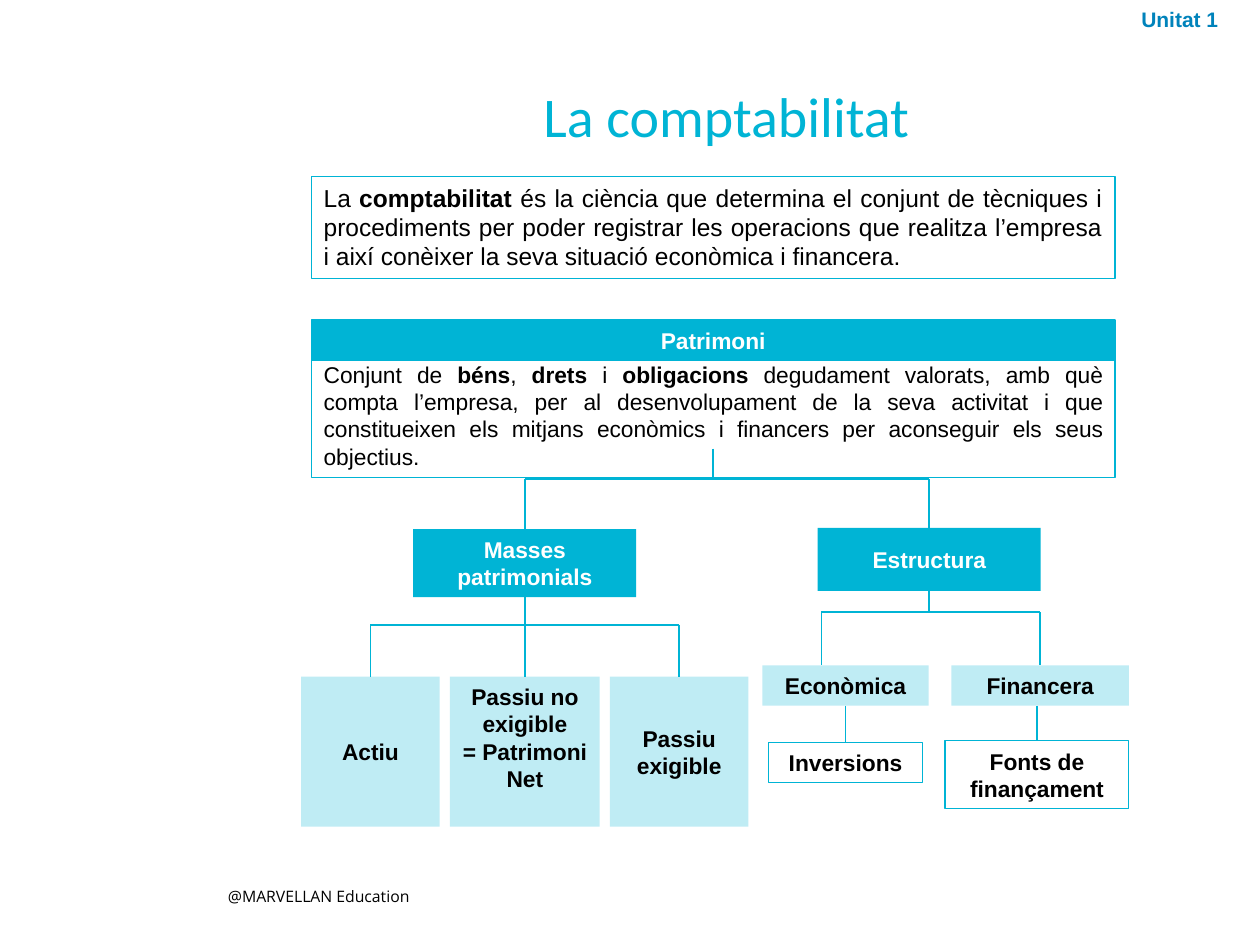
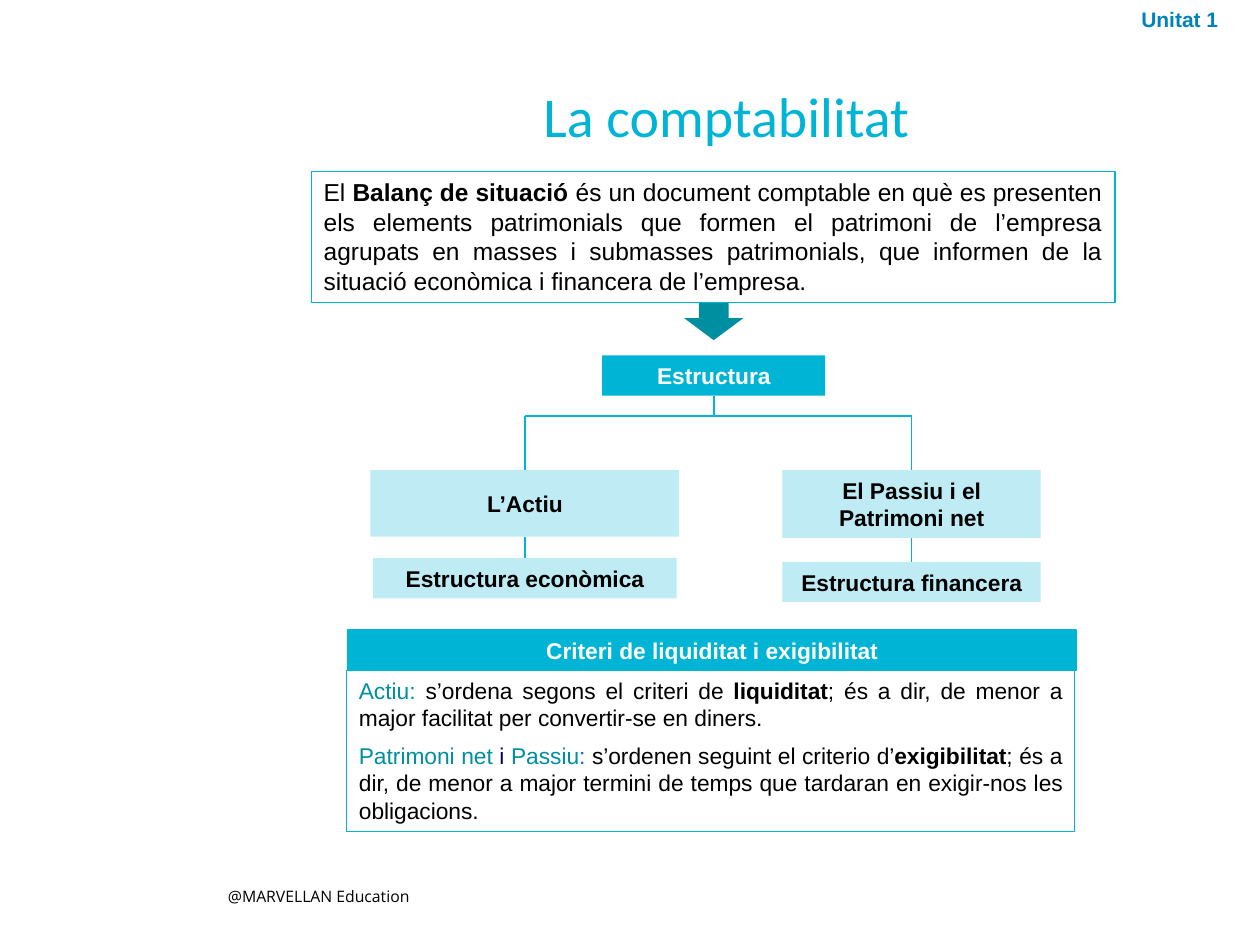
from lxml.etree import SubElement
from pptx import Presentation
from pptx.dml.color import RGBColor
from pptx.enum.shapes import MSO_CONNECTOR, MSO_SHAPE
from pptx.enum.text import MSO_ANCHOR, PP_ALIGN
from pptx.oxml.ns import qn
from pptx.util import Inches, Pt

CYAN = RGBColor(0x00, 0xB4, 0xD5)
TEAL = RGBColor(0x00, 0x8F, 0xA0)
BLUE = RGBColor(0x00, 0x83, 0xBB)
NAVY = RGBColor(0x00, 0x00, 0x64)
AZURE = RGBColor(0x00, 0x64, 0xFF)
BLACK = RGBColor(0x00, 0x00, 0x00)
WHITE = RGBColor(0xFF, 0xFF, 0xFF)

LEFT, WIDE = 2.47, 6.38  # column of the definitions
BAR = 0.32  # height of a one-line box


def bold(text):
    return text, BLACK, True


def spot(end, site):
    """Point of a line end: a pair of inches, or the middle of a box's side."""
    if isinstance(end, tuple):
        return Inches(end[0]), Inches(end[1])
    drop = end.height if site == 2 else 0
    return end.left + end.width // 2, end.top + drop


class Deck:
    def __init__(self):
        self.prs = Presentation()
        self.prs.slide_width, self.prs.slide_height = Inches(10), Inches(7.5)
        self.slide = None

    def start(self, title):
        """Add a slide with its title, unit mark and footer."""
        self.slide = self.prs.slides.add_slide(self.prs.slide_layouts[5])
        head = self.slide.shapes.title
        head.left, head.top = Inches(1.53), Inches(0.68)
        head.width, head.height = Inches(8.47), Inches(0.54)
        frame = head.text_frame
        frame.text = title
        frame.vertical_anchor = MSO_ANCHOR.MIDDLE
        para = frame.paragraphs[0]
        para.alignment = PP_ALIGN.CENTER
        para.line_spacing = 0.9
        self.style(para.runs[0], 32, CYAN, False, "Calibri")
        self.label(8.96, 0, 1.04, 0.3, "Unitat 1", 12, BLUE, True)
        self.label(1.71, 6.99, 1.92, 0.25, "@MARVELLAN Education", 9,
                   font="Open Sans")

    def style(self, run, size, color=BLACK, strong=False, face="Arial"):
        font = run.font
        font.name, font.size, font.bold = face, Pt(size), strong
        font.color.rgb = color

    def label(self, x, y, w, h, text, size, color=BLACK, strong=False,
              font="Arial"):
        box = self.slide.shapes.add_textbox(
            Inches(x), Inches(y), Inches(w), Inches(h))
        box.text_frame.word_wrap = True
        box.text_frame.text = text
        self.style(box.text_frame.paragraphs[0].runs[0], size, color,
                   strong, font)

    def shape(self, x, y, w, h, fill=None, line=None, kind=MSO_SHAPE.RECTANGLE):
        box = self.slide.shapes.add_shape(
            kind, Inches(x), Inches(y), Inches(w), Inches(h))
        box.shadow.inherit = False
        if fill is None:
            box.fill.background()
        else:
            box.fill.solid()
            box.fill.fore_color.rgb = fill
        if line is None:
            box.line.fill.background()
        else:
            box.line.color.rgb = line
            box.line.width = Pt(0.75)
        box.text_frame.word_wrap = True
        return box

    def node(self, x, y, w, h, text, fill=None, line=None, color=BLACK,
             anchor=MSO_ANCHOR.MIDDLE):
        """Box with a bold, centred caption."""
        box = self.shape(x, y, w, h, fill, line)
        frame = box.text_frame
        frame.text = text
        frame.vertical_anchor = anchor
        for para in frame.paragraphs:
            para.alignment = PP_ALIGN.CENTER
            self.style(para.runs[0], 13, color, True)
        return box

    def strong(self, x, y, w, h, text, line=None):
        return self.node(x, y, w, h, text, CYAN, line, WHITE)

    def pale(self, x, y, w, h, text, anchor=MSO_ANCHOR.MIDDLE):
        box = self.node(x, y, w, h, text, CYAN, anchor=anchor)
        tint = box.fill._xPr.find(qn("a:solidFill"))[0]
        SubElement(tint, qn("a:alpha")).set("val", "25000")
        return box

    def prose(self, x, y, w, h, size, *paras, fill=WHITE):
        """Framed, justified text; each paragraph is a list of runs."""
        frame = self.shape(x, y, w, h, fill, CYAN).text_frame
        frame.vertical_anchor = MSO_ANCHOR.TOP
        for i, parts in enumerate(paras):
            para = frame.add_paragraph() if i else frame.paragraphs[0]
            para.alignment = PP_ALIGN.JUSTIFY
            if i < len(paras) - 1:
                para.space_after = Pt(6)
            for part in parts:
                text, *look = (part,) if isinstance(part, str) else part
                run = para.add_run()
                run.text = text
                self.style(run, size, *look)

    def line(self, a, b):
        """Line down from a to b, joined to the ends that are boxes."""
        link = self.slide.shapes.add_connector(
            MSO_CONNECTOR.STRAIGHT, *spot(a, 2), *spot(b, 0))
        if not isinstance(a, tuple):
            link.begin_connect(a, 2)
        if not isinstance(b, tuple):
            link.end_connect(b, 0)
        link.line.color.rgb = CYAN
        link.line.width = Pt(1)
        SubElement(link._element.spPr, qn("a:effectLst"))

    def fork(self, top, y, *kids):
        """Stem from top to a bar at y, with a drop to each kid."""
        self.line(top, (spot(top, 2)[0] / Inches(1), y))
        across = [spot(kid, 0)[0] / Inches(1) for kid in kids]
        self.line((min(across), y), (max(across), y))
        for x, kid in zip(across, kids):
            self.line((x, y), kid)


def wealth(deck):
    deck.start("La comptabilitat")
    deck.prose(LEFT, 1.4, WIDE, 0.81, 14, [
        "La ", bold("comptabilitat"),
        " és la ciència que determina el conjunt de tècniques i procediments "
        "per poder registrar les operacions que realitza l’empresa i així "
        "conèixer la seva situació econòmica i financera."])
    deck.prose(LEFT, 2.81, WIDE, 0.98, 13, [
        "Conjunt de ", bold("béns"), ", ", bold("drets"), " i ",
        bold("obligacions"),
        " degudament valorats, amb què compta l’empresa, per al "
        "desenvolupament de la seva activitat i que constitueixen els mitjans "
        "econòmics i financers per aconseguir els seus objectius."])
    deck.strong(LEFT, 2.54, WIDE, BAR, "Patrimoni", CYAN)

    masses = deck.strong(3.28, 4.2, 1.77, 0.54, "Masses patrimonials")
    frame = deck.strong(6.49, 4.19, 1.77, 0.5, "Estructura")
    deck.fork((5.66, 3.56), 3.8, masses, frame)

    assets = deck.pale(2.39, 5.37, 1.1, 1.19, "Actiu")
    net = deck.pale(3.57, 5.37, 1.19, 1.19,
                    "Passiu no exigible\n= Patrimoni Net", MSO_ANCHOR.TOP)
    debts = deck.pale(4.84, 5.37, 1.1, 1.19, "Passiu exigible")
    deck.fork(masses, 4.96, assets, net, debts)

    econ = deck.pale(6.05, 5.28, 1.32, BAR, "Econòmica")
    funds = deck.pale(7.55, 5.28, 1.41, BAR, "Financera")
    deck.fork(frame, 4.86, (6.52, 5.28), funds)

    uses = deck.node(6.1, 5.89, 1.22, BAR, "Inversions", line=CYAN)
    deck.line(econ, uses)
    source = deck.node(7.5, 5.88, 1.46, 0.54, "Fonts de finançament",
                       line=CYAN)
    deck.line((8.23, 5.6), source)


def balance(deck):
    deck.start("La comptabilitat")
    deck.shape(5.43, 2.35, 0.47, 0.35, TEAL, kind=MSO_SHAPE.DOWN_ARROW)
    deck.prose(LEFT, 1.36, WIDE, 1.04, 14, [
        "El ", bold("Balanç de situació "),
        "és un document comptable en què es presenten els elements "
        "patrimonials que formen el patrimoni de l’empresa agrupats en masses "
        "i submasses patrimonials, que informen de la situació econòmica i "
        "financera de l’empresa."])

    frame = deck.strong(4.78, 2.82, 1.77, BAR, "Estructura")
    assets = deck.pale(2.94, 3.73, 2.45, 0.53, "L’Actiu")
    debts = deck.pale(6.21, 3.73, 2.05, 0.54, "El Passiu i el Patrimoni net")
    deck.fork(frame, 3.3, assets, debts)
    deck.line(assets, deck.pale(2.96, 4.43, 2.41, BAR, "Estructura econòmica"))
    deck.line(debts, deck.pale(6.21, 4.46, 2.05, BAR, "Estructura financera"))

    deck.prose(2.75, 5.32, 5.78, 1.28, 13, [
        ("Actiu: ", TEAL), "s’ordena segons el criteri de ",
        bold("liquiditat"),
        "; és a dir, de menor a major facilitat per convertir-se en diners.",
    ], [
        ("Patrimoni net ", TEAL), ("i ", NAVY), ("Passiu", TEAL),
        (": ", AZURE), "s’ordenen seguint el criterio d’",
        bold("exigibilitat"),
        "; és a dir, de menor a major termini de temps que tardaran en "
        "exigir-nos les obligacions.",
    ], fill=None)
    deck.strong(2.76, 5, 5.78, BAR, "Criteri de liquiditat i exigibilitat",
                CYAN)


def main():
    deck = Deck()
    wealth(deck)
    balance(deck)
    deck.prs.save("out.pptx")


if __name__ == "__main__":
    main()
